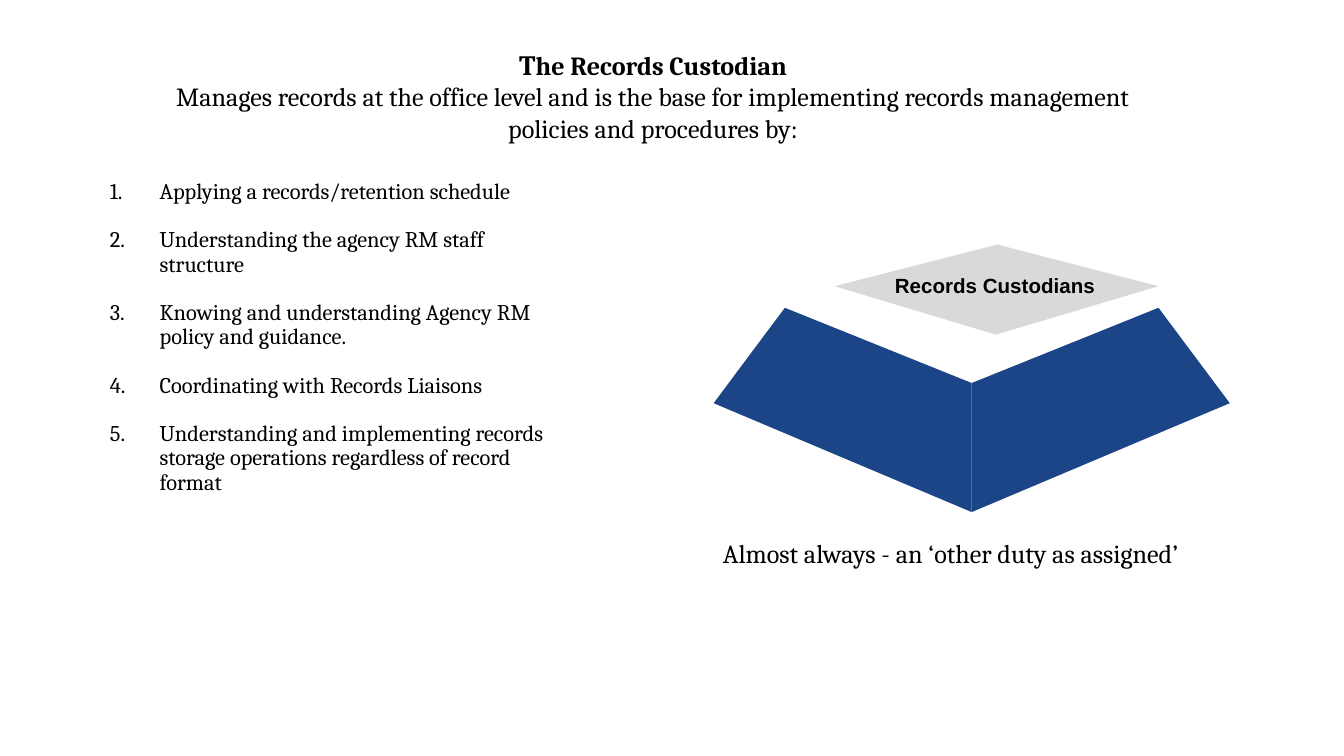
from lxml.etree import SubElement
from pptx import Presentation
from pptx.dml.color import RGBColor
from pptx.enum.text import MSO_ANCHOR, PP_ALIGN
from pptx.oxml.ns import qn
from pptx.util import Inches, Pt

BLACK = RGBColor(0x00, 0x00, 0x00)
GRAY = RGBColor(0xD9, 0xD9, 0xD9)
NAVY = RGBColor(0x1C, 0x45, 0x87)
SERIF = "Cambria"
SANS = "Arial"

TITLE_LINES = [
    [("T", 15, True), ("he Records Custodian", 14, True)],
    [("Manages records at the office level and is the base for implementing "
      "records management policies and procedures by:", 14, False)],
]
DUTIES = [
    "Applying a records/retention schedule",
    "Understanding the agency RM staff structure",
    "Knowing and understanding Agency RM policy and guidance.",
    "Coordinating with Records Liaisons",
    "Understanding and implementing records storage operations regardless of record format",
]
CAPTION = "Almost always - an ‘other duty as assigned’"
LABEL = "Records Custodians"

TITLE_BOX = (0.94, 0.25, 7.84, 0.93)
DUTIES_BOX = (0.56, 1.24, 3.67, 2.75)
CAPTION_BOX = (5.28, 3.9, 3.89, 0.67)
LABEL_BOX = (6.56, 1.94, 1.79, 0.39)

FOLD_X = 7.23
TOP_FACE = [(6.21, 2.13), (7.41, 2.49), (8.62, 2.13), (7.42, 1.82)]
LEFT_FACE = [(5.84, 2.29), (5.31, 3), (FOLD_X, 3.81), (FOLD_X, 2.85)]
RIGHT_FACE = [(2 * FOLD_X - x, y) for x, y in LEFT_FACE]
FACES = [(TOP_FACE, GRAY), (LEFT_FACE, NAVY), (RIGHT_FACE, NAVY)]


def add_run(paragraph, text, size, bold=False, font=SERIF):
    run = paragraph.add_run()
    run.text = text
    run.font.name = font
    run.font.size = Pt(size)
    run.font.bold = bold
    run.font.color.rgb = BLACK


def prepare_frame(shape):
    frame = shape.text_frame
    frame.word_wrap = True
    frame.vertical_anchor = MSO_ANCHOR.TOP
    frame.margin_left = frame.margin_right = Inches(0.1)
    frame.margin_top = frame.margin_bottom = Inches(0.1)
    return frame


def add_text_box(slide, box):
    return prepare_frame(slide.shapes.add_textbox(*map(Inches, box)))


def paragraphs_for(frame, items):
    for index, item in enumerate(items):
        yield (frame.add_paragraph() if index else frame.paragraphs[0]), item


def add_number(paragraph):
    properties = paragraph._p.get_or_add_pPr()
    properties.set("marL", str(Inches(0.53)))
    properties.set("indent", str(Inches(-0.37)))
    color = SubElement(properties, qn("a:buClr"))
    SubElement(color, qn("a:srgbClr"), val=str(BLACK))
    SubElement(properties, qn("a:buAutoNum"), type="arabicPeriod")


def add_face(group, points, color):
    corners = [(Inches(x), Inches(y)) for x, y in points]
    builder = group.shapes.build_freeform(*corners[0])
    builder.add_line_segments(corners[1:], close=True)
    face = builder.convert_to_shape()
    face.shadow.inherit = False
    face.fill.solid()
    face.fill.fore_color.rgb = color
    face.line.fill.background()


def main():
    presentation = Presentation()
    presentation.slide_width = Inches(10)
    presentation.slide_height = presentation.slide_width * 9 // 16
    slide = presentation.slides.add_slide(presentation.slide_layouts[5])

    title = slide.shapes.title
    title.left, title.top, title.width, title.height = map(Inches, TITLE_BOX)
    for paragraph, runs in paragraphs_for(prepare_frame(title), TITLE_LINES):
        paragraph.alignment = PP_ALIGN.CENTER
        for text, size, bold in runs:
            add_run(paragraph, text, size, bold)

    base = slide.shapes.add_group_shape()
    for points, color in FACES:
        add_face(base, points, color)

    for paragraph, duty in paragraphs_for(add_text_box(slide, DUTIES_BOX), DUTIES):
        paragraph.line_spacing = 0.9
        paragraph.space_before = Pt(0 if duty == DUTIES[0] else 13)
        add_number(paragraph)
        add_run(paragraph, duty, 12)

    add_run(add_text_box(slide, CAPTION_BOX).paragraphs[0], CAPTION, 14)
    add_run(add_text_box(slide, LABEL_BOX).paragraphs[0], LABEL, 11, True, SANS)

    presentation.save("out.pptx")


if __name__ == "__main__":
    main()
